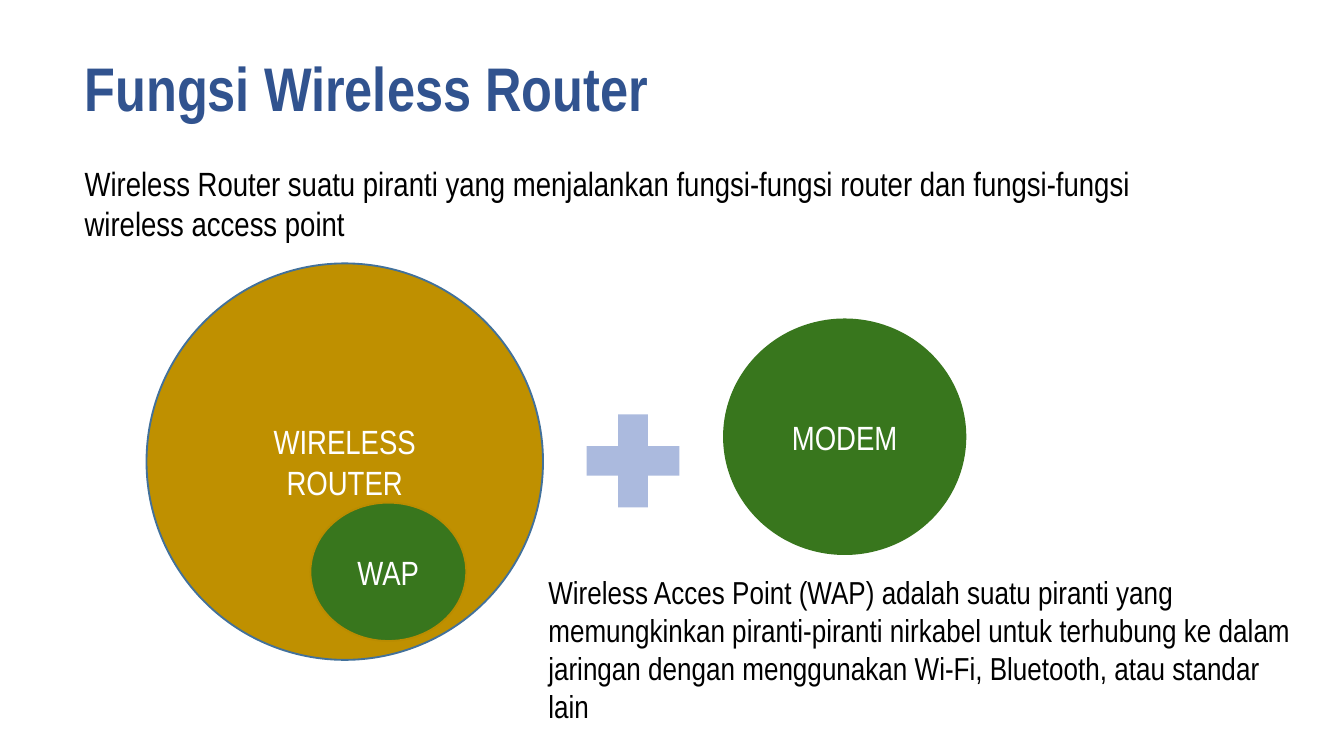
import pptx
import pptx.util
import pptx.dml.color
import pptx.enum.shapes
import pptx.enum.text

Inches = pptx.util.Inches
Pt = pptx.util.Pt
SHAPE = pptx.enum.shapes.MSO_SHAPE
ANCHOR = pptx.enum.text.MSO_ANCHOR
ALIGN = pptx.enum.text.PP_ALIGN

FONT = "Arial Narrow"
COLORS = {
    "title": "31538F",
    "text": "000000",
    "label": "FFFFFF",
    "router": "BF9000",
    "router_line": "42719B",
    "device": "38761D",
    "wap_line": "BA8C00",
    "plus": "ABBADE",
}


def rgb(name):
    return pptx.dml.color.RGBColor.from_string(COLORS[name])


def write(shape, text, size, color, anchor=ANCHOR.TOP, align=ALIGN.LEFT,
          bold=False, spacing=None):
    tf = shape.text_frame
    tf.word_wrap = True
    tf.vertical_anchor = anchor
    tf.margin_left = tf.margin_right = Inches(0.07)
    tf.margin_top = tf.margin_bottom = Inches(0.04)
    tf.text = text
    p = tf.paragraphs[0]
    p.alignment = align
    if spacing:
        p.line_spacing = spacing
    r = p.runs[0]
    r.font.name = FONT
    r.font.size = Pt(size)
    r.font.bold = bold
    r.font.color.rgb = rgb(color)


def add_text(s, box, text, size, color="text", **style):
    tb = s.shapes.add_textbox(*map(Inches, box))
    write(tb, text, size, color, **style)


def add_figure(s, kind, box, fill, line=None, label=None):
    sp = s.shapes.add_shape(kind, *map(Inches, box))
    sp.shadow.inherit = False
    sp.fill.solid()
    sp.fill.fore_color.rgb = rgb(fill)
    if line:
        sp.line.color.rgb = rgb(line)
        sp.line.width = Pt(1)
    else:
        sp.line.fill.background()
    if label:
        write(sp, label, 18, "label", ANCHOR.MIDDLE, ALIGN.CENTER)


def main():
    # Widescreen slide, 16:9
    prs = pptx.Presentation()
    prs.slide_width = Inches(10)
    prs.slide_height = prs.slide_width * 9 // 16
    s = prs.slides.add_slide(prs.slide_layouts[6])

    # Title and explanations
    add_text(s, (0.56, 0.2, 6.75, 0.77), "Fungsi Wireless Router", 33, "title",
             anchor=ANCHOR.BOTTOM, bold=True, spacing=0.9)
    add_text(s, (4.01, 4.22, 5.79, 1.23),
             "Wireless Acces Point (WAP) adalah suatu piranti yang memungkinkan "
             "piranti-piranti nirkabel untuk terhubung ke dalam jaringan dengan "
             "menggunakan Wi-Fi, Bluetooth, atau standar lain", 17)
    add_text(s, (0.56, 1.17, 8.3, 0.65),
             "Wireless Router suatu piranti yang menjalankan fungsi-fungsi "
             "router dan fungsi-fungsi wireless access point", 18)

    # Router containing the access point, plus modem
    add_figure(s, SHAPE.OVAL, (1.09, 1.96, 2.95, 2.95), "router",
               "router_line", "WIRELESS ROUTER")
    add_figure(s, SHAPE.OVAL, (2.31, 3.74, 1.16, 1.03), "device",
               "wap_line", "WAP")
    add_figure(s, SHAPE.MATH_PLUS, (4.24, 2.96, 0.94, 0.94), "plus")
    add_figure(s, SHAPE.OVAL, (5.38, 2.37, 1.81, 1.76), "device", label="MODEM")

    prs.save("out.pptx")


if __name__ == "__main__":
    main()
